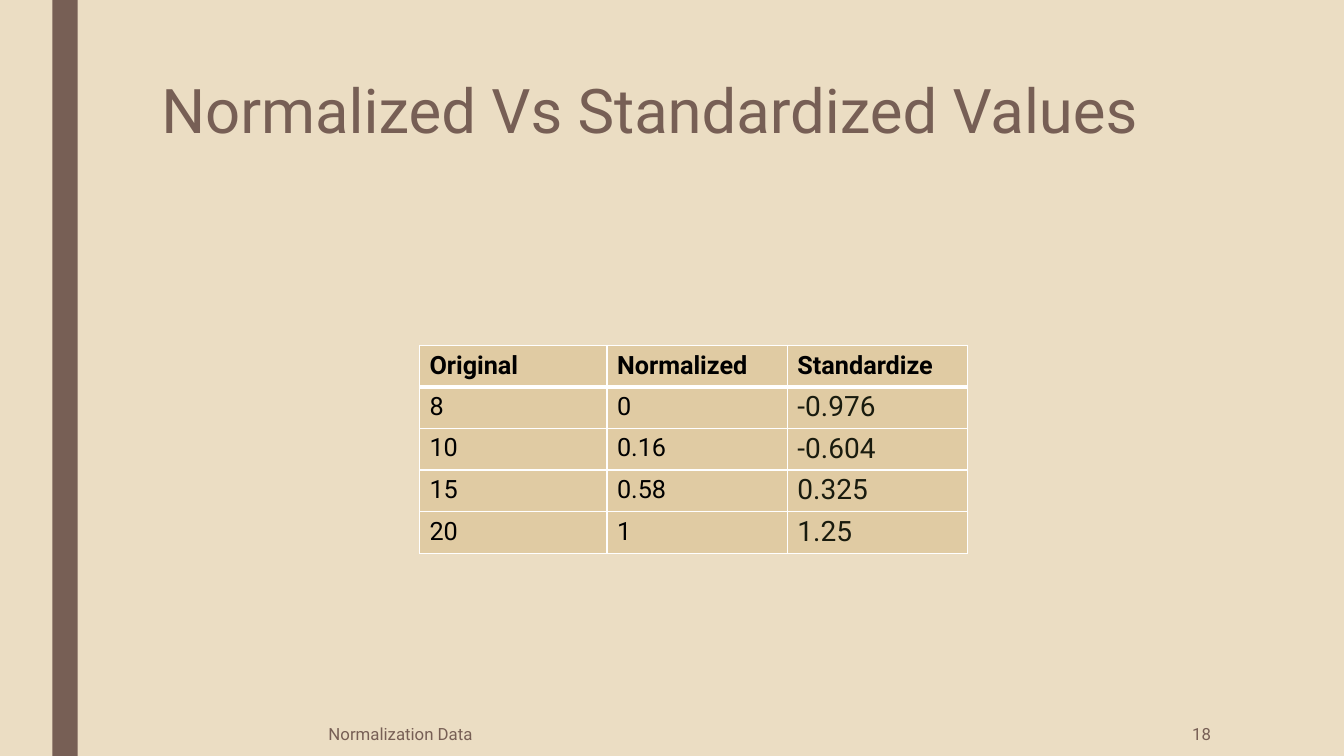
from lxml.etree import SubElement
from pptx import Presentation
from pptx.dml.color import RGBColor
from pptx.enum.shapes import MSO_SHAPE
from pptx.enum.text import MSO_ANCHOR, MSO_AUTO_SIZE, PP_ALIGN
from pptx.oxml.ns import qn
from pptx.util import Inches, Pt

WIDTH, HEIGHT = 13.33, 7.5
FONT = "Roboto"
BROWN, CREAM, SAND = "775F55", "EBDDC3", "E0CBA3"
BLACK, OLIVE, WHITE = "000000", "191B0E", "FFFFFF"

ROWS = [
    ("Original", "Normalized", "Standardize"),
    ("8", "0", "-0.976"),
    ("10", "0.16", "-0.604"),
    ("15", "0.58", "0.325"),
    ("20", "1", "1.25"),
]
COLUMN_WIDTHS = (1.86, 1.79, 1.79)


def color(value):
    return RGBColor.from_string(value)


def inches(box):
    return [Inches(length) for length in box]


def paint(shape_or_cell, value):
    shape_or_cell.fill.solid()
    shape_or_cell.fill.fore_color.rgb = color(value)


def style(para, size, value, bold=False):
    for span in para.runs:
        span.font.name = FONT
        span.font.size = Pt(size)
        span.font.bold = bold
        span.font.color.rgb = color(value)


def add_side_bar(page, box):
    bar = page.shapes.add_shape(MSO_SHAPE.RECTANGLE, *inches(box))
    bar.shadow.inherit = False
    paint(bar, BROWN)
    bar.line.fill.background()


def set_title(page, box, text):
    title = page.shapes.title
    title.left, title.top, title.width, title.height = inches(box)
    frame = title.text_frame
    frame.text = text
    frame.word_wrap = True
    frame.auto_size = MSO_AUTO_SIZE.NONE
    frame.vertical_anchor = MSO_ANCHOR.TOP
    para = frame.paragraphs[0]
    para.alignment = PP_ALIGN.LEFT
    para.line_spacing = 0.89
    style(para, 44, BROWN)


def add_footer_text(page, box, text, alignment):
    frame = page.shapes.add_textbox(*inches(box)).text_frame
    frame.text = text
    frame.word_wrap = True
    frame.vertical_anchor = MSO_ANCHOR.MIDDLE
    para = frame.paragraphs[0]
    para.alignment = alignment
    style(para, 12, BROWN)


def set_borders(cell, top, bottom):
    """Draw white borders; top and bottom are widths in points."""
    properties = cell._tc.get_or_add_tcPr()
    widths = {"a:lnL": 1, "a:lnR": 1, "a:lnT": top, "a:lnB": bottom}
    for position, (side, width) in enumerate(widths.items()):
        line = SubElement(properties, qn(side), w=str(Pt(width)))
        fill = SubElement(line, qn("a:solidFill"))
        SubElement(fill, qn("a:srgbClr"), val=WHITE)
        properties.insert(position, line)


def add_values_table(page, box):
    frame = page.shapes.add_table(len(ROWS), len(COLUMN_WIDTHS), *inches(box))
    table = frame.table
    for column, width in zip(table.columns, COLUMN_WIDTHS):
        column.width = Inches(width)
    for row, values in enumerate(ROWS):
        table.rows[row].height = Inches(box[3] / len(ROWS))
        for column, value in enumerate(values):
            cell = table.cell(row, column)
            cell.text = value
            paint(cell, SAND)
            set_borders(cell, 3 if row == 1 else 1, 3 if row == 0 else 1)
            para = cell.text_frame.paragraphs[0]
            if row and column == 2:
                para.line_spacing = 0.94
                para.space_before = Pt(10)
                para.space_after = Pt(2)
                style(para, 20, OLIVE)
            else:
                style(para, 18, BLACK, bold=row == 0)


def add_values_slide(deck):
    page = deck.slides.add_slide(deck.slide_layouts[5])
    paint(page.background, CREAM)
    add_side_bar(page, (0.52, 0, 0.25, HEIGHT))
    set_title(page, (1.5, 0.1 * HEIGHT, 10.5, 1.62),
              "Normalized Vs Standardized Values")
    footer_height = 0.44
    footer_top = HEIGHT - footer_height
    add_footer_text(page, (3.16, footer_top, 6.87, footer_height),
                    "Normalization Data", PP_ALIGN.LEFT)
    add_footer_text(page, (10.36, footer_top, 1.75, footer_height),
                    "18", PP_ALIGN.RIGHT)
    add_values_table(page, (4.16, 3.43, sum(COLUMN_WIDTHS), 2.03))


def main():
    deck = Presentation()
    deck.slide_width, deck.slide_height = Inches(WIDTH), Inches(HEIGHT)
    add_values_slide(deck)
    deck.save("out.pptx")


if __name__ == "__main__":
    main()
